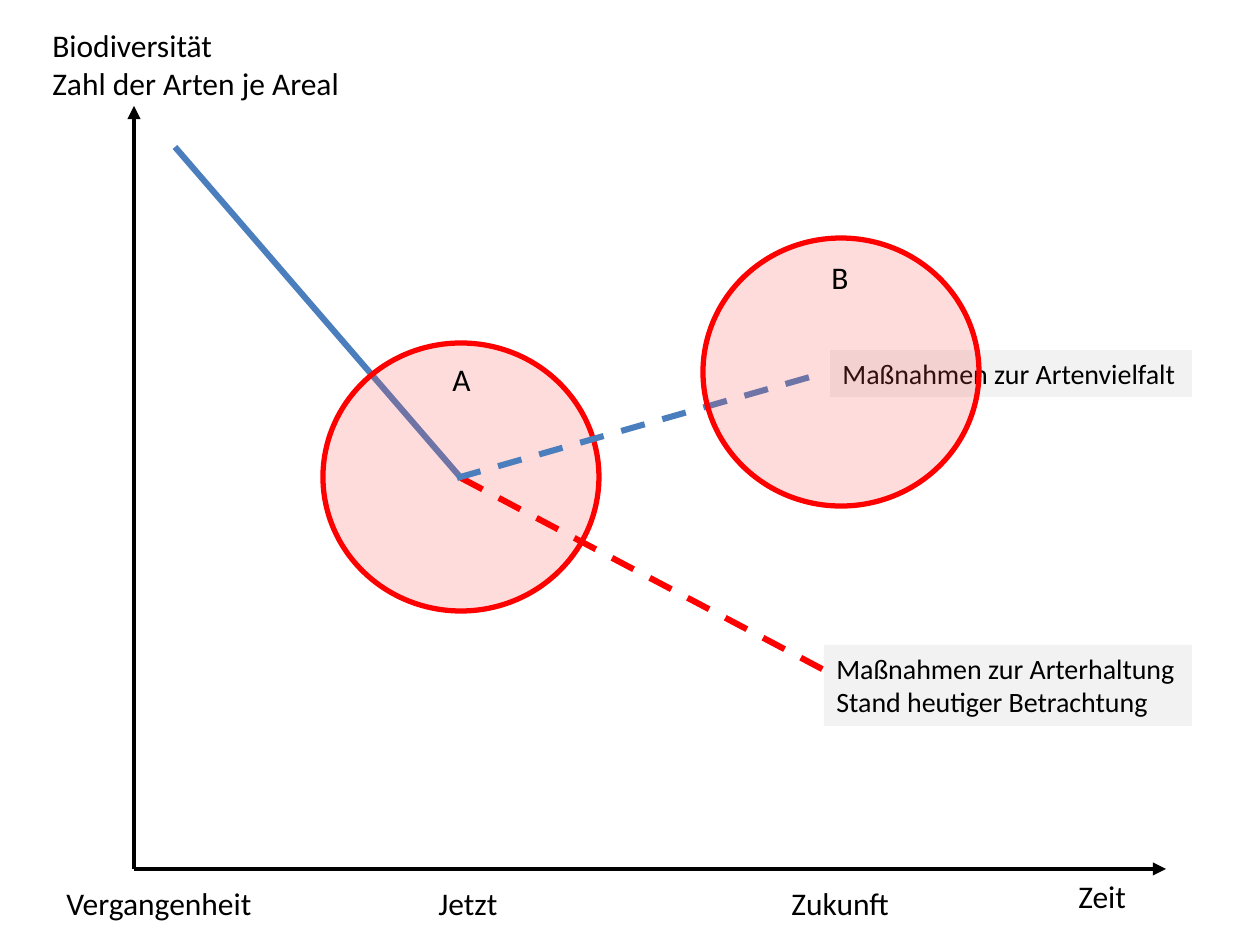
from dataclasses import dataclass

from lxml import etree
from pptx import Presentation
from pptx.dml.color import RGBColor
from pptx.enum.dml import MSO_LINE
from pptx.enum.shapes import MSO_CONNECTOR, MSO_SHAPE
from pptx.enum.text import MSO_ANCHOR, MSO_AUTO_SIZE, PP_ALIGN
from pptx.oxml.ns import qn
from pptx.util import Emu, Pt

STRAIGHT = MSO_CONNECTOR.STRAIGHT
DASH = MSO_LINE.DASH
OVAL = MSO_SHAPE.OVAL
RECTANGLE = MSO_SHAPE.RECTANGLE
TOP = MSO_ANCHOR.TOP
LEFT = PP_ALIGN.LEFT
FIT_SHAPE = MSO_AUTO_SIZE.SHAPE_TO_FIT_TEXT


@dataclass(frozen=True)
class Theme:
    font: str = "Calibri"
    ink: str = "000000"
    diversity: str = "4B7EBC"
    preservation: str = "FF0000"
    zone: str = "FF5050"
    zone_alpha: int = 20
    measure: str = "F2F2F2"
    label_size: int = 18
    measure_size: int = 16
    axis_width: float = 2.5
    trend_width: float = 3.5
    zone_width: float = 3


THEME = Theme()
EMU_PER_PX = 914400 / 126
SLIDE_SIZE = (1260, 945)

ORIGIN = (134, 869)
AXIS_ENDS = [(1166, 869), (134, 106)]
AXIS_LABELS = [
    (["Biodiversität", "Zahl der Arten je Areal"], (40, 20, 315, 89)),
    (["Zeit"], (1066, 871, 73, 50)),
    (["Vergangenheit"], (54, 878, 213, 50)),
    (["Jetzt"], (426, 878, 86, 50)),
    (["Zukunft"], (779, 878, 125, 50)),
]
NOW = (461, 478)
PAST_TREND = ((175, 147), NOW)
PRESERVATION_TREND = (NOW, (824, 670))
DIVERSITY_TREND = ((457, 478), (824, 373))
MEASURES = [
    (["Maßnahmen zur Arterhaltung", "Stand heutiger Betrachtung"], (824, 645, 368, 81)),
    (["Maßnahmen zur Artenvielfalt"], (830, 350, 362, 47)),
]
ZONE_SIZE = (276, 268)
ZONE_A, ZONE_B = (323, 343), (703, 238)
LETTER_A = (["A"], (440, 354, 44, 50))
LETTER_B = (["B"], (819, 252, 43, 50))


def px(*lengths):
    return [Emu(round(length * EMU_PER_PX)) for length in lengths]


def rgb(color):
    return RGBColor.from_string(color)


def add_line(shapes, start, end, color, width, dash=None, arrow=False):
    connector = shapes.add_connector(STRAIGHT, *px(*start, *end))
    connector.line.color.rgb = rgb(color)
    connector.line.width = Pt(width)
    if dash:
        connector.line.dash_style = dash
    if arrow:
        etree.SubElement(connector.line._get_or_add_ln(), qn("a:tailEnd"), type="triangle")
    etree.SubElement(connector._element.spPr, qn("a:effectLst"))


def write(shape, lines, size):
    frame = shape.text_frame
    frame.word_wrap = False
    frame.auto_size = FIT_SHAPE
    frame.vertical_anchor = TOP
    for index, line in enumerate(lines):
        paragraph = frame.add_paragraph() if index else frame.paragraphs[0]
        paragraph.alignment = LEFT
        run = paragraph.add_run()
        run.text = line
        run.font.name = THEME.font
        run.font.size = Pt(size)
        run.font.color.rgb = rgb(THEME.ink)


def add_label(shapes, lines, box):
    write(shapes.add_textbox(*px(*box)), lines, THEME.label_size)


def add_filled(shapes, kind, box, color):
    shape = shapes.add_shape(kind, *px(*box))
    shape.shadow.inherit = False
    shape.fill.solid()
    shape.fill.fore_color.rgb = rgb(color)
    return shape


def add_zone(shapes, corner):
    zone = add_filled(shapes, OVAL, corner + ZONE_SIZE, THEME.zone)
    tint = zone._element.spPr.find(qn("a:solidFill"))[0]
    etree.SubElement(tint, qn("a:alpha"), val=str(THEME.zone_alpha * 1000))
    zone.line.color.rgb = rgb(THEME.preservation)
    zone.line.width = Pt(THEME.zone_width)


def add_measure(shapes, lines, box):
    measure = add_filled(shapes, RECTANGLE, box, THEME.measure)
    measure.line.fill.background()
    write(measure, lines, THEME.measure_size)


def main():
    deck = Presentation()
    deck.slide_width, deck.slide_height = px(*SLIDE_SIZE)
    shapes = deck.slides.add_slide(deck.slide_layouts[6]).shapes

    for axis_end in AXIS_ENDS:
        add_line(shapes, ORIGIN, axis_end, THEME.ink, THEME.axis_width, arrow=True)
    for lines, box in AXIS_LABELS:
        add_label(shapes, lines, box)

    add_line(shapes, *PAST_TREND, THEME.diversity, THEME.trend_width)
    add_zone(shapes, ZONE_A)
    add_line(shapes, *PRESERVATION_TREND, THEME.preservation, THEME.trend_width, DASH)
    add_line(shapes, *DIVERSITY_TREND, THEME.diversity, THEME.trend_width, DASH)
    for lines, box in MEASURES:
        add_measure(shapes, lines, box)

    add_label(shapes, *LETTER_A)
    add_zone(shapes, ZONE_B)
    add_label(shapes, *LETTER_B)
    deck.save("out.pptx")


if __name__ == "__main__":
    main()
